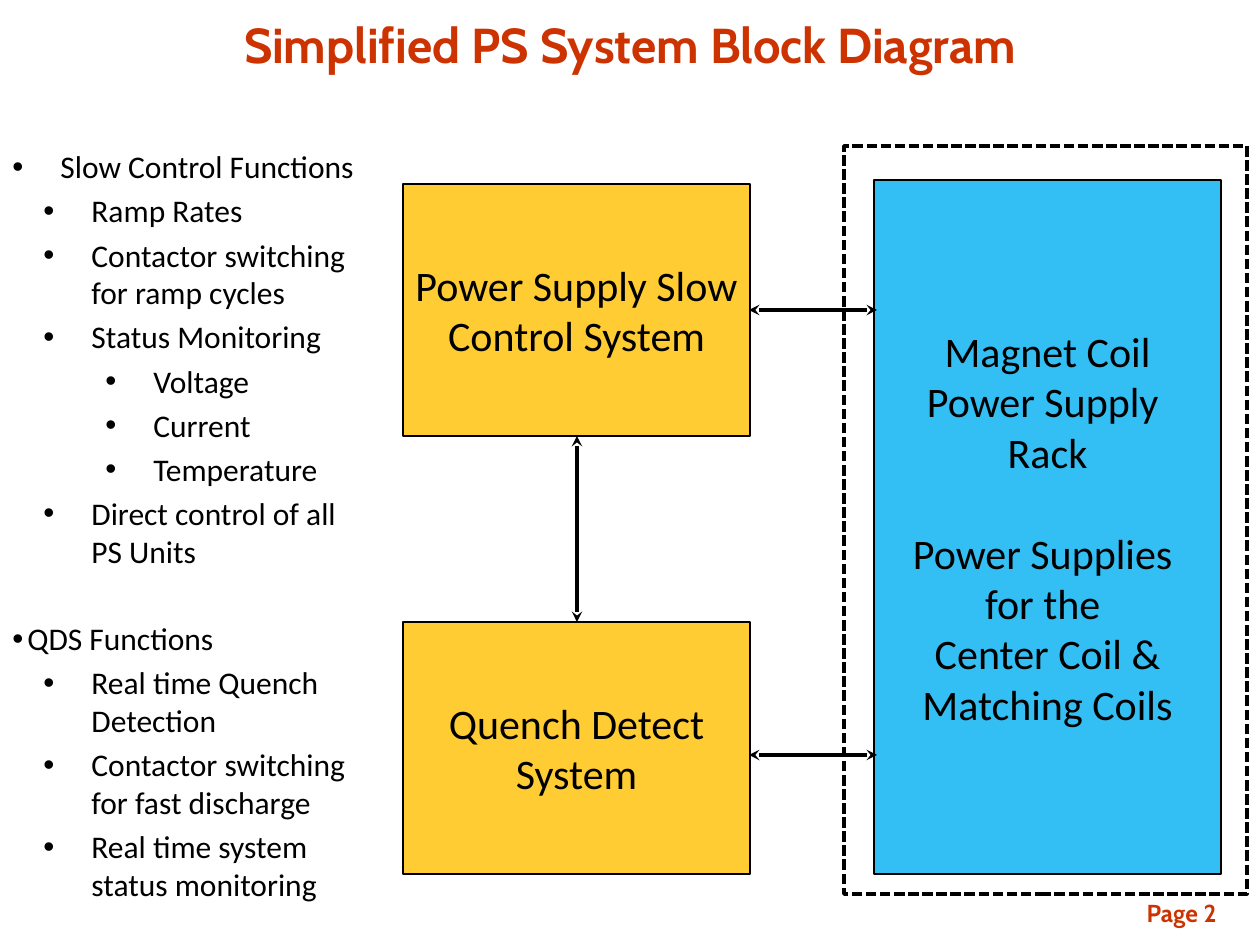
from lxml import etree
from pptx import Presentation
from pptx.dml.color import RGBColor
from pptx.enum.dml import MSO_LINE
from pptx.enum.shapes import MSO_CONNECTOR, MSO_SHAPE
from pptx.enum.text import MSO_ANCHOR, PP_ALIGN
from pptx.oxml.ns import qn
from pptx.util import Emu, Pt

RECT = MSO_SHAPE.RECTANGLE
STRAIGHT = MSO_CONNECTOR.STRAIGHT
DASH = MSO_LINE.SQUARE_DOT
CENTER, RIGHT = PP_ALIGN.CENTER, PP_ALIGN.RIGHT
TOP, MIDDLE = MSO_ANCHOR.TOP, MSO_ANCHOR.MIDDLE
PX = 914400 / 126
BLACK, RED, AMBER, BLUE = "000000", "CC3300", "FFC000", "00B0F0"


def px(*lengths):
    return [Emu(round(n * PX)) for n in lengths]


def style(paragraph, size, face, color, bold=False):
    font = paragraph.font
    font.size, font.name, font.bold = Pt(size), face, bold
    font.color.rgb = RGBColor.from_string(color)


prs = Presentation()
prs.slide_width, prs.slide_height = px(1260, 945)
slide = prs.slides.add_slide(prs.slide_layouts[6])
shapes = slide.shapes

# Title and page number
for text, area, size, align, anchor in [
    ("Simplified PS System Block Diagram", (63, 6, 1134, 76), 28, CENTER, MIDDLE),
    ("Page 2", (914, 892, 315, 42), 14, RIGHT, TOP),
]:
    frame = shapes.add_textbox(*px(*area)).text_frame
    frame.word_wrap = True
    frame.vertical_anchor = anchor
    heading = frame.paragraphs[0]
    heading.text = text
    heading.alignment = align
    style(heading, size, "Cabin", RED, bold=True)

# Function lists: level, text, left margin, hanging indent, space before
INDENTS = [48, 79, 141]
functions = [
    (0, "Slow Control Functions"),
    (1, "Ramp Rates"),
    (1, "Contactor switching for ramp cycles"),
    (1, "Status Monitoring"),
    (2, "Voltage"),
    (2, "Current"),
    (2, "Temperature"),
    (1, "Direct control of all PS Units"),
    (0, "QDS Functions"),
    (1, "Real time Quench Detection"),
    (1, "Contactor switching for fast discharge"),
    (1, "Real time system status monitoring"),
]
frame = shapes.add_textbox(*px(0, 145, 382, 746)).text_frame
frame.word_wrap = True
for i, (level, text) in enumerate(functions):
    item = frame.paragraphs[0] if i == 0 else frame.add_paragraph()
    item.text = text
    item.level = level
    style(item, 18, "Calibri", BLACK)
    item.space_before = Pt(3.6)
    margin, hang = px(INDENTS[level], 48)
    if i == 0:
        item.line_spacing = 0.9
    elif level == 0:  # second list starts after a gap, with a tight bullet
        item.space_before = Pt(28.5)
        margin, hang = px(15, 15)
    props = item._p.get_or_add_pPr()
    props.set("marL", str(margin))
    props.set("indent", str(-hang))
    etree.SubElement(props, qn("a:buFont")).set("typeface", "Arial")
    etree.SubElement(props, qn("a:buChar")).set("char", "•")

# System blocks
rack_lines = ["Magnet Coil Power Supply ", "Rack", "Power Supplies ", "for the ",
              "Center Coil &", "Matching Coils"]
for area, color, lines in [
    ((403, 184, 347, 252), AMBER, ["Power Supply Slow Control System"]),
    ((403, 622, 347, 252), AMBER, ["Quench Detect System"]),
    ((874, 180, 347, 694), BLUE, rack_lines),
]:
    block = shapes.add_shape(RECT, *px(*area))
    block.shadow.inherit = False
    block.fill.solid()
    block.fill.fore_color.rgb = RGBColor.from_string(color)
    tint = block._element.spPr.find(qn("a:solidFill"))[0]
    etree.SubElement(tint, qn("a:alpha")).set("val", "80000")
    block.line.color.rgb = RGBColor.from_string(BLACK)
    block.line.width = Pt(1.25)
    frame = block.text_frame
    frame.word_wrap = True
    frame.vertical_anchor = MIDDLE
    for i, text in enumerate(lines):
        label = frame.paragraphs[0] if i == 0 else frame.add_paragraph()
        label.text = text
        label.alignment = CENTER
        style(label, 24, "Calibri", BLACK)
        if text == "Power Supplies ":
            label.space_before = Pt(29)

# Two-way links between the blocks
for ends in [(749, 310, 877, 310), (749, 755, 877, 755), (577, 622, 577, 436)]:
    link = shapes.add_connector(STRAIGHT, *px(*ends))
    link.line.color.rgb = RGBColor.from_string(BLACK)
    link.line.width = Pt(2)
    outline = link.line._get_or_add_ln()
    for end in ("a:headEnd", "a:tailEnd"):
        etree.SubElement(outline, qn(end)).set("type", "stealth")
    etree.SubElement(link._element.spPr, qn("a:effectLst"))

# Dashed border around the rack
border = shapes.add_shape(RECT, *px(844, 146, 403, 748))
border.shadow.inherit = False
border.fill.background()
border.line.color.rgb = RGBColor.from_string(BLACK)
border.line.width = Pt(2)
border.line.dash_style = DASH

prs.save("out.pptx")
